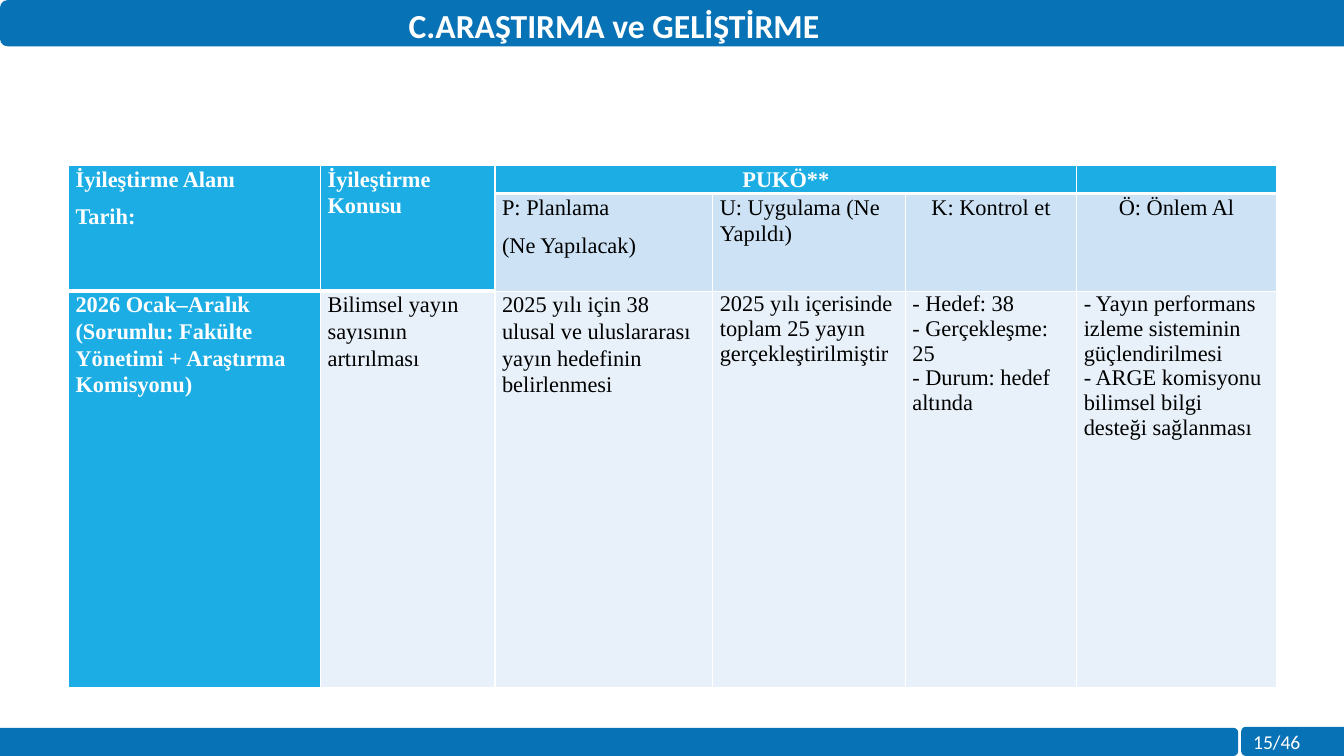
from lxml import etree
from pptx import Presentation
from pptx.dml.color import RGBColor
from pptx.enum.shapes import MSO_SHAPE as SHAPE
from pptx.enum.text import MSO_ANCHOR as ANCHOR, PP_ALIGN as ALIGN
from pptx.oxml.ns import qn
from pptx.util import Inches, Pt

COLORS = {"bar": "0772B5", "accent": "1CADE4", "subhead": "CDE3F5",
          "body": "E8F1FA", "white": "FFFFFF", "black": "000000"}
COLUMNS = [2.5, 1.73, 2.16, 1.91, 1.7, 1.98]
ROWS = [0.28, 0.97, 3.93]

# Each cell is a list of paragraphs
CELLS = [
    [["İyileştirme Alanı", "Tarih:"], ["İyileştirme Konusu"], ["PUKÖ**"], [], [], []],
    [[], [], ["P: Planlama", "(Ne Yapılacak)"], ["U: Uygulama (Ne Yapıldı)"],
     ["K: Kontrol et"], ["Ö: Önlem Al"]],
    [["2026 Ocak–Aralık\n(Sorumlu: Fakülte Yönetimi + Araştırma Komisyonu)"],
     ["Bilimsel yayın sayısının artırılması"],
     ["2025 yılı için 38 ulusal ve uluslararası yayın hedefinin belirlenmesi"],
     ["2025 yılı içerisinde toplam 25 yayın gerçekleştirilmiştir"],
     ["- Hedef: 38\n- Gerçekleşme: 25\n- Durum: hedef altında"],
     ["- Yayın performans izleme sisteminin güçlendirilmesi",
      "- ARGE komisyonu bilimsel bilgi desteği sağlanması"]],
]
ALIGNS = {(0, 0): ALIGN.JUSTIFY, (0, 2): ALIGN.CENTER,
          (1, 4): ALIGN.CENTER, (1, 5): ALIGN.CENTER}


def rgb(name):
    return RGBColor.from_string(COLORS[name])


def add_text(p, text, size, font, color, bold=False):
    """Add one run per line, with line breaks between them."""
    for i, line in enumerate(text.split("\n")):
        if i:
            p.add_line_break()
        r = p.add_run()
        r.text = line
        r.font.size, r.font.name, r.font.bold = Pt(size), font, bold
        r.font.color.rgb = rgb(color)


def add_bar(s, left, top, width, height, rotation):
    """Add a bar, given as it appears once its rounded end is turned sideways."""
    x, y = left + (width - height) / 2, top + (height - width) / 2
    sp = s.shapes.add_shape(SHAPE.ROUND_2_SAME_RECTANGLE, Inches(x), Inches(y),
                            Inches(height), Inches(width))
    sp.rotation = rotation
    sp.shadow.inherit = False
    sp.fill.solid()
    sp.fill.fore_color.rgb = rgb("bar")
    sp.line.fill.background()


def set_title(s, text):
    sp = s.shapes.title
    sp.left, sp.top, sp.width, sp.height = map(Inches, (0.56, 0, 11.06, 0.5))
    sp.element.getparent().append(sp.element)  # in front of the header bar
    tf = sp.text_frame
    tf.word_wrap, tf.vertical_anchor = True, ANCHOR.TOP
    p = tf.paragraphs[0]
    p.alignment = ALIGN.CENTER
    add_text(p, text, 24, "Calibri", "white", True)


def add_page_number(s, text):
    tf = s.shapes.add_textbox(*map(Inches, (12.33, 7.19, 1.15, 0.34))).text_frame
    tf.word_wrap = True
    add_text(tf.paragraphs[0], text, 14, "Calibri", "white")


def set_borders(cell, bottom):
    tcPr = cell._tc.get_or_add_tcPr()
    for side, width in (("L", 1), ("R", 1), ("T", 1), ("B", bottom)):
        ln = etree.SubElement(tcPr, qn(f"a:ln{side}"), w=str(Pt(width)))
        fill = etree.SubElement(ln, qn("a:solidFill"))
        etree.SubElement(fill, qn("a:srgbClr"), val=COLORS["white"])


def fill_cell(cell, row, col):
    accent = row == 0 or col == 0 or (row, col) == (1, 1)
    set_borders(cell, 3 if row == 0 or (row == 1 and col < 2) else 1)
    cell.fill.solid()
    cell.fill.fore_color.rgb = rgb("accent" if accent else ("subhead", "body")[row - 1])
    cell.margin_left = cell.margin_right = Inches(0.07)
    cell.margin_top = cell.margin_bottom = 0
    tf = cell.text_frame
    paragraphs = CELLS[row][col]
    if not paragraphs:
        etree.SubElement(tf.paragraphs[0]._p, qn("a:endParaRPr"), sz="1600")
    for i, text in enumerate(paragraphs):
        p = tf.add_paragraph() if i else tf.paragraphs[0]
        p.alignment = ALIGNS.get((row, col), ALIGN.LEFT)
        if row < 2 or col < 3:
            p.line_spacing, p.space_after = 1.07, Pt(8)
        add_text(p, text, 16, "Times New Roman", "white" if accent else "black", accent)


def add_plan_table(s):
    table = s.shapes.add_table(len(ROWS), len(COLUMNS), Inches(0.68), Inches(1.64),
                               Inches(sum(COLUMNS)), Inches(sum(ROWS))).table
    for column, width in zip(table.columns, COLUMNS):
        column.width = Inches(width)
    for row, height in zip(table.rows, ROWS):
        row.height = Inches(height)
    for row in range(len(ROWS)):
        for col in range(len(COLUMNS)):
            fill_cell(table.cell(row, col), row, col)
    for first, last in (((0, 0), (1, 0)), ((0, 1), (1, 1)), ((0, 2), (0, 4))):
        table.cell(*first).merge(table.cell(*last))


def main():
    prs = Presentation()
    prs.slide_width, prs.slide_height = Inches(13.33), Inches(7.5)
    s = prs.slides.add_slide(prs.slide_layouts[5])
    add_bar(s, 0, 7.22, 12.28, 0.28, 90)
    add_bar(s, 12.31, 7.21, 1.02, 0.29, 270)
    add_bar(s, 0, 0, 13.33, 0.46, 270)
    add_page_number(s, "15/46")
    set_title(s, "C.ARAŞTIRMA ve GELİŞTİRME")
    add_plan_table(s)
    prs.save("out.pptx")


if __name__ == "__main__":
    main()
